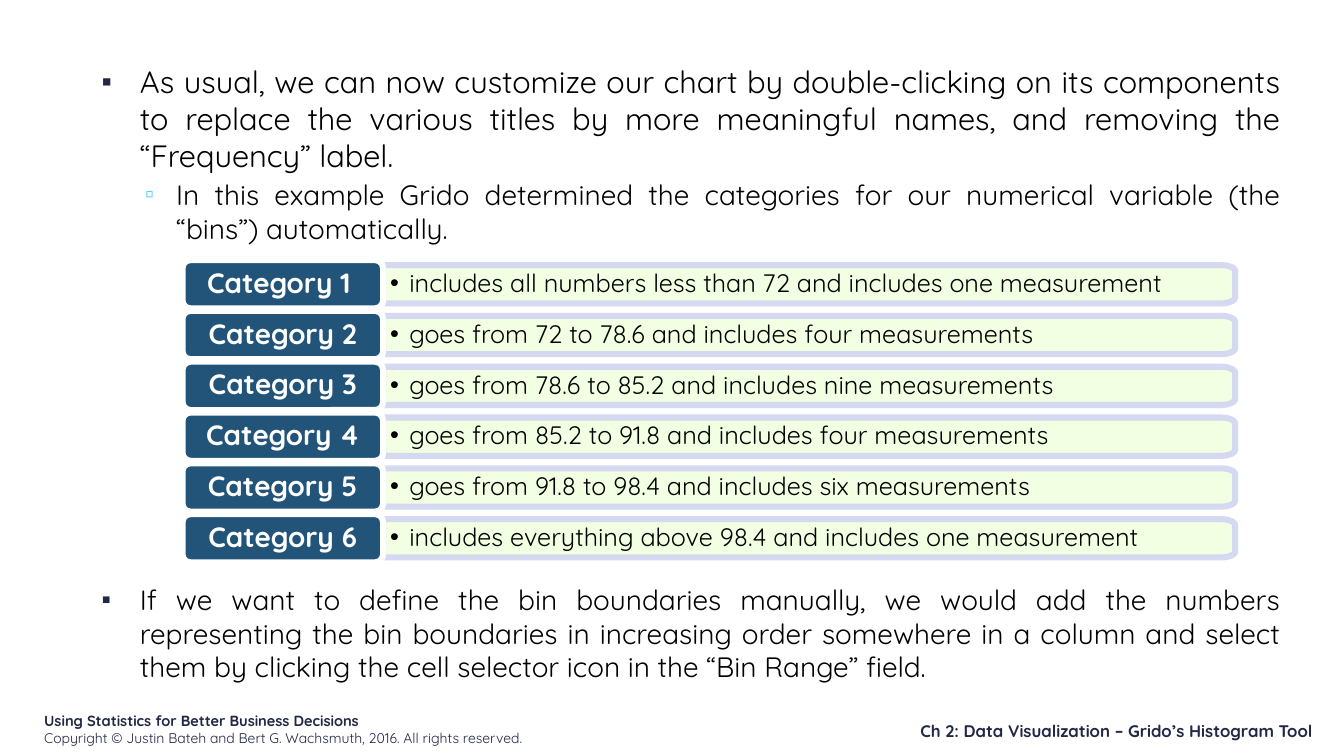
from math import cos, pi, sin

from lxml.etree import SubElement
from pptx import Presentation
from pptx.dml.color import RGBColor
from pptx.enum.shapes import MSO_SHAPE as Preset
from pptx.enum.text import MSO_ANCHOR as Anchor, PP_ALIGN as Align
from pptx.oxml.ns import qn
from pptx.util import Inches, Pt

# Content
INTRO = ("As usual, we can now customize our chart by double-clicking on its "
         "components to replace the various titles by more meaningful names, "
         "and removing the “Frequency” label.")
EXAMPLE = ("In this example Grido determined the categories for our numerical "
           "variable (the “bins”) automatically.")
MANUAL = ("If we want to define the bin boundaries manually, we would add the "
          "numbers representing the bin boundaries in increasing order somewhere "
          "in a column and select them by clicking the cell selector icon in the "
          "“Bin Range” field.")
CATEGORIES = [
    ("Category 1 ", "includes all numbers less than 72 and includes one measurement"),
    ("Category 2 ", "goes from 72 to 78.6 and includes four measurements"),
    ("Category 3 ", "goes from 78.6 to 85.2 and includes nine measurements"),
    ("Category 4 ", "goes from 85.2 to 91.8 and includes four measurements"),
    ("Category 5 ", "goes from 91.8 to 98.4 and includes six measurements"),
    ("Category 6 ", "includes everything above 98.4 and includes one measurement"),
]
BOOK = "Using Statistics for Better Business Decisions"
RIGHTS = "Copyright © Justin Bateh and Bert G. Wachsmuth, 2016. All rights reserved."
CHAPTER = "Ch 2: Data Visualization – Grido’s Histogram Tool"

FONT = "Quicksand"
COLORS = {"ink": "000000", "navy": "212745", "sky": "5ECCF3", "label": "225479",
          "band": "F2FFE3", "edge": "D2D5F1", "white": "FFFFFF"}

# Layout in inches
LABEL_LEFT, LABEL_WIDTH, LABEL_HEIGHT = 1.81, 1.99, 0.48
FIRST_TOP, LAST_TOP = 2.58, 5.10
PITCH = (LAST_TOP - FIRST_TOP) / (len(CATEGORIES) - 1)
BAND_LEFT, BAND_RIGHT, BAND_HEIGHT = LABEL_LEFT + LABEL_WIDTH, 12.25, 0.38
CORNER_WIDTH, CORNER_HEIGHT, CORNER_STEPS = 0.14, 0.06, 8
EDGE_WIDTH = 4.33

deck = Presentation()
deck.slide_width, deck.slide_height = Inches(13.33), Inches(7.5)
page = deck.slides.add_slide(deck.slide_layouts[6])


def rgb(name):
    return RGBColor.from_string(COLORS[name])


def add_text_box(left, top, width, height):
    frame = page.shapes.add_textbox(*map(Inches, (left, top, width, height))).text_frame
    frame.word_wrap = True
    return frame


def write(para, text, size, color, bold=False, align=Align.LEFT, spacing=None):
    para.add_run().text = text
    para.alignment = align
    if spacing:
        para.line_spacing = spacing
    font = para.font
    font.name, font.size, font.bold = FONT, Pt(size), bold
    font.color.rgb = rgb(color)


def add_bullet(para, char, left, hanging, color, percent=100):
    props = para._p.get_or_add_pPr()
    props.set("marL", str(Inches(left)))
    props.set("indent", str(Inches(-hanging)))
    tint = SubElement(props, qn("a:buClr"))
    SubElement(tint, qn("a:srgbClr")).set("val", COLORS[color])
    SubElement(props, qn("a:buSzPct")).set("val", str(percent * 1000))
    SubElement(props, qn("a:buFont")).set("typeface", "Arial")
    SubElement(props, qn("a:buChar")).set("char", char)
    # Character defaults come last in the paragraph properties
    props.append(props.find(qn("a:defRPr")))


def style_shape(shape, fill, line, margin):
    shape.shadow.inherit = False
    shape.fill.solid()
    shape.fill.fore_color.rgb = rgb(fill)
    shape.line.color.rgb = rgb(line)
    shape.line.width = Pt(EDGE_WIDTH)
    frame = shape.text_frame
    frame.word_wrap = True
    frame.vertical_anchor = Anchor.MIDDLE
    frame.margin_left = frame.margin_right = Inches(margin)
    frame.margin_top = frame.margin_bottom = 0
    return frame.paragraphs[0]


def band_outline(top):
    """Rectangle whose two right-hand corners are rounded."""
    bottom = top + BAND_HEIGHT
    center_x = BAND_RIGHT - CORNER_WIDTH
    points = [(BAND_LEFT, top)]
    for center_y, start in ((top + CORNER_HEIGHT, -pi / 2), (bottom - CORNER_HEIGHT, 0)):
        for step in range(CORNER_STEPS + 1):
            angle = start + pi / 2 * step / CORNER_STEPS
            points.append((center_x + CORNER_WIDTH * cos(angle),
                           center_y + CORNER_HEIGHT * sin(angle)))
    points.append((BAND_LEFT, bottom))
    return [(Inches(x), Inches(y)) for x, y in points]


def add_band(top, text):
    start, *others = band_outline(top)
    builder = page.shapes.build_freeform(*start)
    builder.add_line_segments(others, close=True)
    band = builder.convert_to_shape()
    para = style_shape(band, "band", "edge", 0.07)
    edge = band.line.fill._xPr.find(qn("a:solidFill"))
    SubElement(edge[0], qn("a:alpha")).set("val", "90000")
    write(para, text, 18, "ink", spacing=0.9)
    add_bullet(para, "•", 0.19, 0.19, "ink")


def add_label(top, text):
    label = page.shapes.add_shape(Preset.ROUNDED_RECTANGLE, *map(
        Inches, (LABEL_LEFT, top, LABEL_WIDTH, LABEL_HEIGHT)))
    para = style_shape(label, "label", "white", 0.2)
    write(para, text, 20, "white", bold=True, align=Align.CENTER, spacing=0.9)


# Opening points
opening = add_text_box(0.84, 0.57, 11.96, 1.95)
intro = opening.paragraphs[0]
write(intro, INTRO, 22, "ink", align=Align.JUSTIFY)
add_bullet(intro, "▪", 0.45, 0.38, "navy", 95)
example = opening.add_paragraph()
example.space_before = Pt(3)
write(example, EXAMPLE, 20, "ink", align=Align.JUSTIFY)
add_bullet(example, "▫", 0.81, 0.31, "sky", 90)

# Category rows
for row, (name, description) in enumerate(CATEGORIES):
    row_top = FIRST_TOP + row * PITCH
    add_band(row_top + (LABEL_HEIGHT - BAND_HEIGHT) / 2, description)
    add_label(row_top, name)

# Closing point
manual = add_text_box(0.84, 5.73, 11.96, 1.12).paragraphs[0]
write(manual, MANUAL, 20, "ink", align=Align.JUSTIFY)
add_bullet(manual, "▪", 0.45, 0.38, "navy", 95)

# Footer
credits = add_text_box(0.34, 7.01, 5.28, 0.4)
write(credits.paragraphs[0], BOOK, 10.5, "navy", bold=True)
write(credits.add_paragraph(), RIGHTS, 10, "navy")
chapter = add_text_box(5.65, 7.1, 7.47, 0.3)
chapter.vertical_anchor = Anchor.BOTTOM
write(chapter.paragraphs[0], CHAPTER, 12, "navy", bold=True, align=Align.RIGHT)

deck.save("out.pptx")
